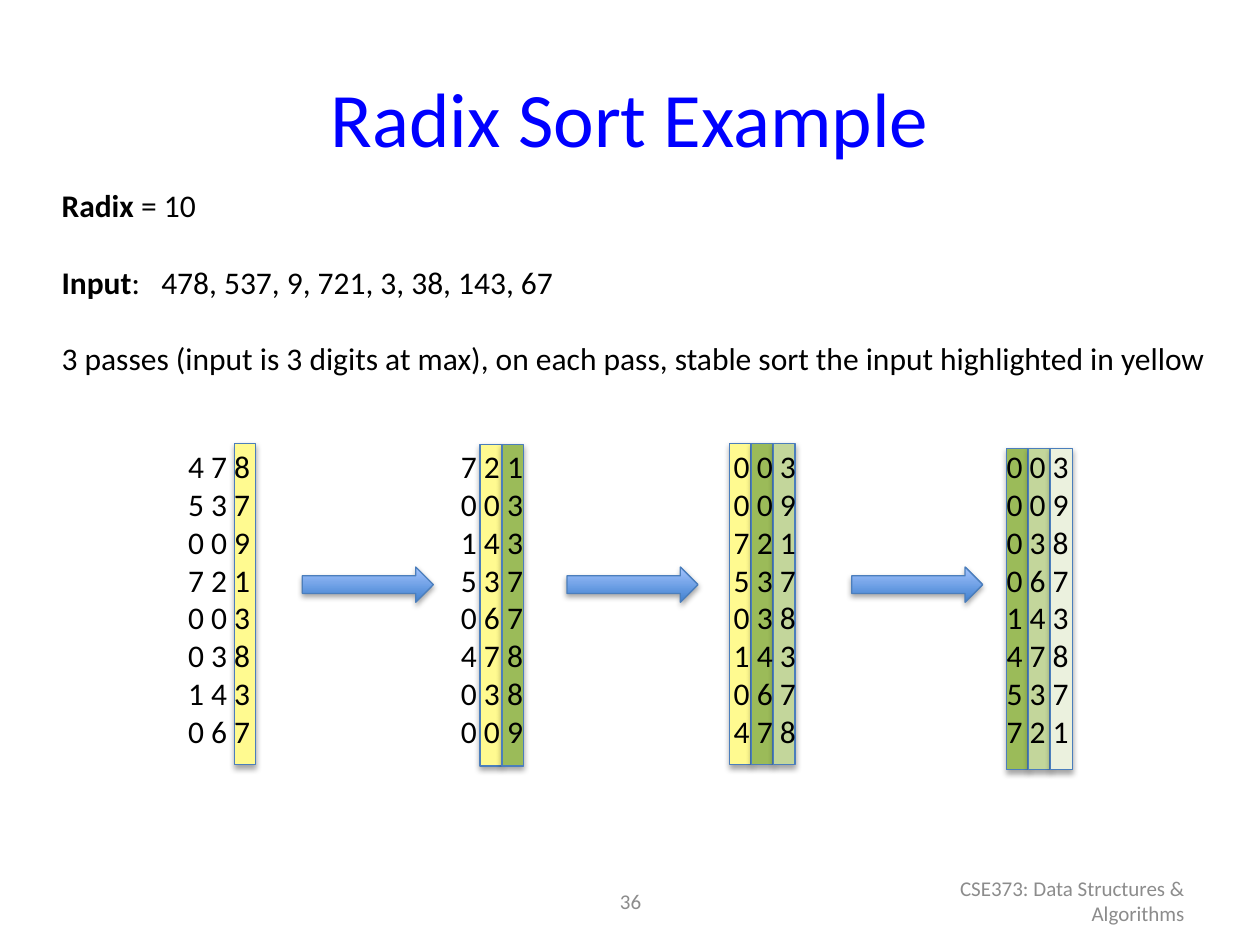
from pptx import Presentation
from pptx.dml.color import RGBColor
from pptx.enum.shapes import MSO_SHAPE as Shape
from pptx.enum.text import MSO_ANCHOR as Anchor, PP_ALIGN as Align
from pptx.util import Inches, Pt

BLACK, BLUE, GREY, OUTLINE = "000000", "0000FF", "8C8C8C", "4B7EBC"
YELLOW, GREEN, LIGHT_GREEN, PALE_GREEN = "FFFA90", "9BBB59", "C3D69B", "EBF1DE"


def rgb(value):
    return RGBColor.from_string(value)


def write(frame, lines, size, color, align):
    """Fill a text frame with lines, each a list of (text, bold) runs."""
    frame.word_wrap = True
    for index, runs in enumerate(lines):
        para = frame.paragraphs[0] if index == 0 else frame.add_paragraph()
        para.alignment = align
        for text, bold in runs:
            span = para.add_run()
            span.text = text
            span.font.name = "Calibri"
            span.font.size = Pt(size)
            span.font.bold = bold
            span.font.color.rgb = rgb(color)


deck = Presentation()
deck.slide_width, deck.slide_height = Inches(10), Inches(7.5)
page = deck.slides.add_slide(deck.slide_layouts[5])

# Title
title = page.shapes.title
title.left, title.top = Inches(0.5), Inches(0.3)
title.width, title.height = Inches(9), Inches(1.25)
title.text_frame.vertical_anchor = Anchor.MIDDLE
write(title.text_frame, [[("Radix Sort Example", False)]], 44, BLUE, Align.CENTER)

# Introduction
intro = page.shapes.add_textbox(Inches(0.39), Inches(1.43), Inches(9.39), Inches(1.62))
write(intro.text_frame, [
    [("Radix", True), (" = 10", False)],
    [("Input", True), (":   478, 537, 9, 721, 3, 38, 143, 67", False)],
    [("3 passes (input is 3 digits at max), on each pass, "
      "stable sort the input highlighted in yellow", False)],
], 18, BLACK, Align.LEFT)
for para in intro.text_frame.paragraphs[:-1]:
    para.space_after = Pt(22)

# Highlight bars behind the digits: left, top and colours of each stage
stages = [
    (1.86, 3.52, [YELLOW]),
    (3.81, 3.53, [YELLOW, GREEN]),
    (5.79, 3.52, [YELLOW, GREEN, LIGHT_GREEN]),
    (7.99, 3.56, [GREEN, LIGHT_GREEN, PALE_GREEN]),
]
for left, top, colors in stages:
    for place, color in enumerate(colors):
        bar = page.shapes.add_shape(Shape.RECTANGLE, Inches(left + place * 0.175),
                                    Inches(top), Inches(0.17), Inches(2.55))
        bar.fill.solid()
        bar.fill.fore_color.rgb = rgb(color)
        bar.line.color.rgb = rgb(OUTLINE)
        bar.line.width = Pt(0.75)

# Arrows between the stages
for left in (2.4, 4.5, 6.76):
    arrow = page.shapes.add_shape(Shape.RIGHT_ARROW, Inches(left), Inches(4.5),
                                  Inches(1.04), Inches(0.28))
    arrow.fill.gradient()
    arrow.fill.gradient_angle = 90
    for stop, color, position in zip(arrow.fill.gradient_stops, ("3F80CE", "A4C4FF"), (0, 1)):
        stop.color.rgb = rgb(color)
        stop.position = position
    arrow.line.color.rgb = rgb(OUTLINE)
    arrow.line.width = Pt(0.75)

# Digits: the input, then the result of sorting by ones, tens and hundreds
numbers = [478, 537, 9, 721, 3, 38, 143, 67]
for stage in range(4):
    if stage > 0:
        numbers = sorted(numbers, key=lambda number: number // 10 ** (stage - 1) % 10)
    column = page.shapes.add_textbox(Inches(0.66 + stage * 2.165), Inches(3.5),
                                     Inches(2.16), Inches(2.6))
    rows = [[(" ".join(f"{number:03d}"), False)] for number in numbers]
    write(column.text_frame, rows, 18, BLACK, Align.CENTER)

# Footer
for left, width, text, align in (
    (3.42, 3.17, "36", Align.CENTER),
    (7.17, 2.33, "CSE373: Data Structures & Algorithms", Align.RIGHT),
):
    footer = page.shapes.add_textbox(Inches(left), Inches(6.95), Inches(width), Inches(0.4))
    footer.text_frame.vertical_anchor = Anchor.MIDDLE
    write(footer.text_frame, [[(text, False)]], 12, GREY, align)

deck.save("out.pptx")
